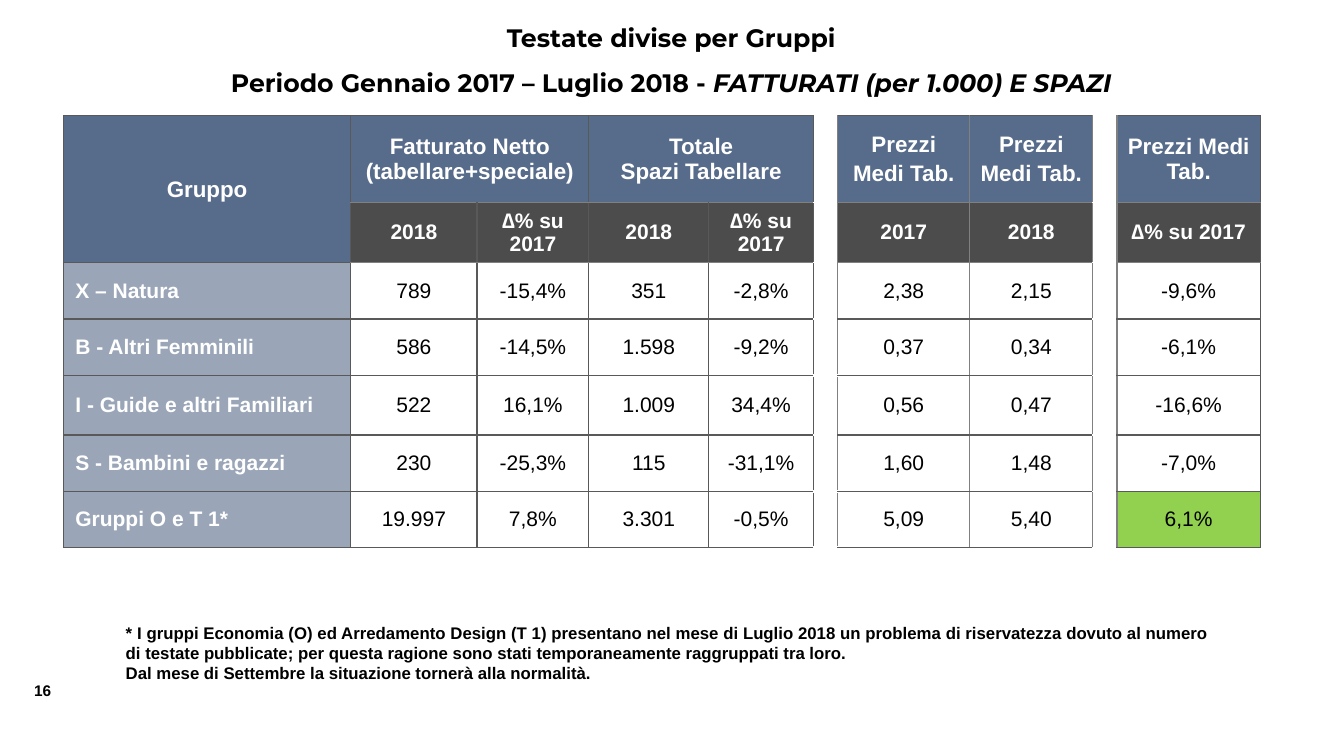
from dataclasses import dataclass
from typing import Optional

from lxml.etree import SubElement
from pptx import Presentation
from pptx.dml.color import RGBColor
from pptx.enum.text import MSO_ANCHOR, MSO_AUTO_SIZE, PP_ALIGN
from pptx.oxml.ns import qn
from pptx.slide import Slide
from pptx.table import _Cell
from pptx.util import Cm, Pt

WHITE = RGBColor(0xFF, 0xFF, 0xFF)
BLACK = RGBColor(0x00, 0x00, 0x00)
BLUE = RGBColor(0x57, 0x6B, 0x8A)
GREEN = RGBColor(0x92, 0xD0, 0x50)
DARK_LINE = RGBColor(0x59, 0x59, 0x59)
GREY_LINE = RGBColor(0x80, 0x80, 0x80)

COLUMN_WIDTHS = (7.24, 3.18, 2.82, 3.02, 2.64, 0.61, 3.33, 3.1, 0.61, 3.61)
ROW_HEIGHTS = (2.18, 1.52, 1.42, 1.42, 1.5, 1.42, 1.42)
GAP_COLUMNS = (5, 8)
HEADER_ROWS = 2
MERGES = (((0, 0), (1, 0)), ((0, 1), (0, 2)), ((0, 3), (0, 4)))

CELL_TEXTS = (
    ("Gruppo", "Fatturato Netto (tabellare+speciale)", "", "Totale\nSpazi Tabellare", "", "",
     "Prezzi\nMedi Tab.", "Prezzi\nMedi Tab.", "", "Prezzi Medi Tab."),
    ("", "2018", "∆% su 2017", "2018", "∆% su 2017", "", "2017", "2018", "", "∆% su 2017"),
    ("X – Natura", "789", "-15,4%", "351", "-2,8%", "", "2,38", "2,15", "", "-9,6%"),
    ("B - Altri Femminili", "586", "-14,5%", "1.598", "-9,2%", "", "0,37", "0,34", "", "-6,1%"),
    ("I - Guide e altri Familiari", "522", "16,1%", "1.009", "34,4%", "", "0,56", "0,47", "", "-16,6%"),
    ("S - Bambini e ragazzi", "230", "-25,3%", "115", "-31,1%", "", "1,60", "1,48", "", "-7,0%"),
    ("Gruppi O e T 1*", "19.997", "7,8%", "3.301", "-0,5%", "", "5,09", "5,40", "", "6,1%"),
)


@dataclass(frozen=True)
class CellStyle:
    fill: Optional[RGBColor]
    colour: RGBColor
    bold: bool
    size: int = 15
    opacity: int = 100
    align: PP_ALIGN = PP_ALIGN.CENTER
    margins: tuple[float, float] = (0, 0)
    left_indent: float = 0


@dataclass(frozen=True)
class Note:
    left: float
    top: float
    width: float
    height: float
    text: str
    size: int
    wrap: bool
    align: PP_ALIGN


GROUP_HEADER = CellStyle(BLUE, WHITE, True, size=16, margins=(0.25, 0.13))
YEAR_HEADER = CellStyle(BLACK, WHITE, True, opacity=70, margins=(0.25, 0.13))
ROW_LABEL = CellStyle(BLUE, WHITE, True, opacity=60, align=PP_ALIGN.LEFT, left_indent=0.3)
VALUE = CellStyle(None, BLACK, False)
HIGHLIGHT = CellStyle(GREEN, BLACK, False)
GAP = CellStyle(WHITE, BLACK, False)

NOTES = (
    Note(0.61, 17.04, 1.07, 0.74, "16", 11, False, PP_ALIGN.LEFT),
    Note(2.92, 15.57, 27.81, 1.8,
         "* I gruppi Economia (O) ed Arredamento Design (T 1) presentano nel mese di Luglio 2018 "
         "un problema di riservatezza dovuto al numero di testate pubblicate; per questa ragione "
         "sono stati temporaneamente raggruppati tra loro.\n"
         "Dal mese di Settembre la situazione tornerà alla normalità.", 12, True, PP_ALIGN.JUSTIFY),
)


def style_for(row: int, column: int) -> CellStyle:
    if column in GAP_COLUMNS:
        return GAP
    if row < HEADER_ROWS:
        return GROUP_HEADER if row == 0 or column == 0 else YEAR_HEADER
    if column == 0:
        return ROW_LABEL
    last_cell = (len(ROW_HEIGHTS) - 1, len(COLUMN_WIDTHS) - 1)
    return HIGHLIGHT if (row, column) == last_cell else VALUE


def vertical_line(edge: int) -> tuple[RGBColor, float]:
    inner = GAP_COLUMNS[0] < edge < len(COLUMN_WIDTHS)
    return (GREY_LINE if inner else DARK_LINE), 1


def horizontal_line(edge: int, column: int) -> tuple[RGBColor, float]:
    if column in GAP_COLUMNS:
        thick = column == GAP_COLUMNS[0] and edge > HEADER_ROWS
        return WHITE, 2.25 if thick else 1
    return (GREY_LINE if column and edge in (1, 2) else DARK_LINE), 1


def draw_borders(cell: _Cell, row: int, column: int) -> None:
    lines = {
        "a:lnL": vertical_line(column),
        "a:lnR": vertical_line(column + 1),
        "a:lnT": horizontal_line(row, column),
        "a:lnB": horizontal_line(row + 1, column),
    }
    properties = cell._tc.get_or_add_tcPr()
    for tag, (colour, width) in lines.items():
        line = SubElement(properties, qn(tag), w=str(Pt(width)))
        SubElement(SubElement(line, qn("a:solidFill")), qn("a:srgbClr"), val=str(colour))


def fill_cell(cell: _Cell, style: CellStyle) -> None:
    if style.fill is None:
        cell.fill.background()
        return
    cell.fill.solid()
    cell.fill.fore_color.rgb = style.fill
    if style.opacity < 100:
        colour = cell._tc.tcPr.find(qn("a:solidFill")).find(qn("a:srgbClr"))
        SubElement(colour, qn("a:alpha"), val=str(style.opacity * 1000))


def draw_cell(cell: _Cell, row: int, column: int) -> None:
    style = style_for(row, column)
    draw_borders(cell, row, column)
    fill_cell(cell, style)
    side, vertical = style.margins
    cell.margin_left = Cm(side + style.left_indent)
    cell.margin_right = Cm(side)
    cell.margin_top = cell.margin_bottom = Cm(vertical)
    cell.vertical_anchor = MSO_ANCHOR.MIDDLE
    cell.text = CELL_TEXTS[row][column]
    for index, para in enumerate(cell.text_frame.paragraphs):
        para.alignment = style.align
        if index and column > GAP_COLUMNS[0]:
            para.space_before = Pt(3)
        para.font.name = "Arial"
        para.font.size = Pt(style.size)
        para.font.bold = style.bold
        para.font.color.rgb = style.colour


def draw_table(page: Slide) -> None:
    table = page.shapes.add_table(
        len(ROW_HEIGHTS), len(COLUMN_WIDTHS), Cm(1.6), Cm(2.92),
        Cm(sum(COLUMN_WIDTHS)), Cm(sum(ROW_HEIGHTS))).table
    table.first_row = table.horz_banding = False
    for column, width in enumerate(COLUMN_WIDTHS):
        table.columns[column].width = Cm(width)
    for row, height in enumerate(ROW_HEIGHTS):
        table.rows[row].height = Cm(height)
        for column in range(len(COLUMN_WIDTHS)):
            draw_cell(table.cell(row, column), row, column)
    for first, last in MERGES:
        table.cell(*first).merge(table.cell(*last))


def draw_title(page: Slide) -> None:
    title = page.shapes.title
    title.left, title.top, title.width, title.height = Cm(2.82), Cm(0.05), Cm(28.19), Cm(2.72)
    frame = title.text_frame
    frame.auto_size = MSO_AUTO_SIZE.NONE
    frame.vertical_anchor = MSO_ANCHOR.TOP
    para = frame.paragraphs[0]
    para.alignment = PP_ALIGN.CENTER
    para.line_spacing = 1.5
    para.add_run().text = "Testate divise per Gruppi"
    para.add_line_break()
    para.add_run().text = "Periodo Gennaio 2017 – Luglio 2018 - "
    span = para.add_run()
    span.text = "FATTURATI (per 1.000) E SPAZI"
    span.font.italic = True
    para.font.name = "Montserrat"
    para.font.size = Pt(18)
    para.font.bold = True
    para.font.color.rgb = BLACK


def draw_note(page: Slide, note: Note) -> None:
    box = page.shapes.add_textbox(Cm(note.left), Cm(note.top), Cm(note.width), Cm(note.height))
    box.text_frame.word_wrap = note.wrap
    box.text_frame.text = note.text
    for para in box.text_frame.paragraphs:
        para.alignment = note.align
        para.font.name = "Arial"
        para.font.size = Pt(note.size)
        para.font.bold = True
        para.font.color.rgb = BLACK


def main() -> None:
    """Build the slide on revenue and space by group of titles."""
    deck = Presentation()
    deck.slide_width, deck.slide_height = Cm(33.87), Cm(19.05)
    page = deck.slides.add_slide(deck.slide_layouts[5])
    draw_title(page)
    draw_table(page)
    for note in NOTES:
        draw_note(page, note)
    deck.save("out.pptx")


if __name__ == "__main__":
    main()
